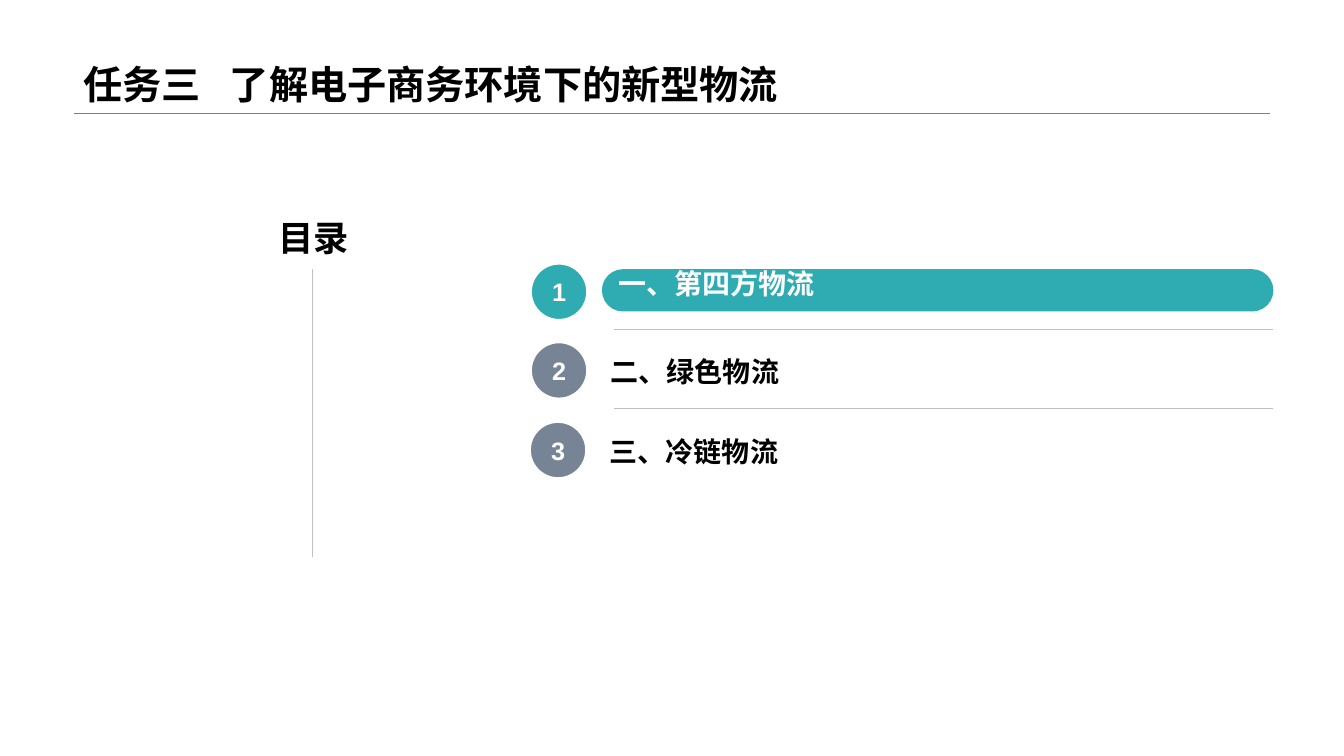
from lxml import etree
from pptx import Presentation
from pptx.dml.color import RGBColor
from pptx.enum.shapes import MSO_CONNECTOR, MSO_SHAPE
from pptx.enum.text import MSO_ANCHOR, PP_ALIGN
from pptx.oxml.ns import qn
from pptx.util import Inches, Pt

BLACK = RGBColor(0x00, 0x00, 0x00)
WHITE = RGBColor(0xFF, 0xFF, 0xFF)
TEAL = RGBColor(0x2F, 0xAC, 0xB2)
SLATE = RGBColor(0x77, 0x84, 0x95)
GRAY = RGBColor(0x80, 0x80, 0x80)
LIGHT_GRAY = RGBColor(0xBF, 0xBF, 0xBF)

BADGE_SIZE = 0.57
LABEL_WIDTH, LABEL_HEIGHT = 6.66, 0.42

# number, badge left and top, label left and top, label text
TOPICS = [
    ("1", 5.26, 2.61, 5.97, 2.67, "一、第四方物流"),
    ("2", 5.26, 3.39, 5.96, 3.48, "二、绿色物流"),
    ("3", 5.25, 4.18, 5.95, 4.27, "三、冷链物流"),
]


def write_text(shape, text, size, color, anchor, align=PP_ALIGN.LEFT):
    frame = shape.text_frame
    frame.word_wrap = True
    frame.vertical_anchor = anchor
    paragraph = frame.paragraphs[0]
    paragraph.text = text
    paragraph.alignment = align
    paragraph.font.name = "Arial"
    paragraph.font.size = Pt(size)
    paragraph.font.bold = True
    paragraph.font.color.rgb = color
    return paragraph


def add_tab_stop(paragraph, position):
    properties = paragraph._p.get_or_add_pPr()
    tab_list = etree.Element(qn("a:tabLst"))
    etree.SubElement(tab_list, qn("a:tab"), pos=str(position), algn="l")
    properties.find(qn("a:defRPr")).addprevious(tab_list)


def set_title(slide):
    title = slide.shapes.title
    title.left, title.top = Inches(0.73), Inches(0)
    title.width, title.height = Inches(11.87), Inches(1.12)
    paragraph = write_text(title, "任务三\t了解电子商务环境下的新型物流", 28, BLACK, MSO_ANCHOR.BOTTOM)
    paragraph.line_spacing = 0.9
    add_tab_stop(paragraph, Inches(1.45))


def add_rule(slide, x1, y1, x2, y2, color):
    rule = slide.shapes.add_connector(
        MSO_CONNECTOR.STRAIGHT, Inches(x1), Inches(y1), Inches(x2), Inches(y2))
    rule.line.color.rgb = color
    rule.line.width = Pt(0.25)
    etree.SubElement(rule._element.spPr, qn("a:effectLst"))


def add_filled_shape(slide, kind, left, top, width, height, fill):
    shape = slide.shapes.add_shape(
        kind, Inches(left), Inches(top), Inches(width), Inches(height))
    shape.shadow.inherit = False
    shape.fill.solid()
    shape.fill.fore_color.rgb = fill
    shape.line.fill.background()
    return shape


def add_badge(slide, number, left, top, fill):
    badge = add_filled_shape(slide, MSO_SHAPE.OVAL, left, top, BADGE_SIZE, BADGE_SIZE, fill)
    badge.line.color.rgb = WHITE
    badge.line.width = Pt(2.25)
    write_text(badge, number, 18, WHITE, MSO_ANCHOR.MIDDLE, PP_ALIGN.CENTER)


def add_active_label(slide, text, left, top):
    pill = add_filled_shape(
        slide, MSO_SHAPE.ROUNDED_RECTANGLE, left, top, LABEL_WIDTH, LABEL_HEIGHT, TEAL)
    pill.adjustments[0] = 0.5
    write_text(pill, text, 20, WHITE, MSO_ANCHOR.BOTTOM).line_spacing = 1.1


def add_label(slide, text, left, top):
    box = slide.shapes.add_textbox(
        Inches(left), Inches(top), Inches(LABEL_WIDTH), Inches(LABEL_HEIGHT))
    write_text(box, text, 20, BLACK, MSO_ANCHOR.BOTTOM)


def add_contents_heading(slide):
    heading = add_filled_shape(slide, MSO_SHAPE.RECTANGLE, 1.65, 2.1, 1.91, 0.57, WHITE)
    write_text(heading, "目录", 25.2, BLACK, MSO_ANCHOR.TOP, PP_ALIGN.RIGHT)


def main():
    presentation = Presentation()
    presentation.slide_width = Inches(13.33)
    presentation.slide_height = Inches(7.5)
    slide = presentation.slides.add_slide(presentation.slide_layouts[5])

    set_title(slide)
    add_rule(slide, 0.73, 1.12, 12.6, 1.12, GRAY)
    add_rule(slide, 3.1, 2.15, 3.1, 5.53, LIGHT_GRAY)
    add_contents_heading(slide)
    for y in (3.27, 4.05):
        add_rule(slide, 6.09, y, 12.63, y, LIGHT_GRAY)

    for index, (number, badge_left, badge_top, left, top, text) in enumerate(TOPICS):
        active = index == 0
        add_badge(slide, number, badge_left, badge_top, TEAL if active else SLATE)
        if active:
            add_active_label(slide, text, left, top)
        else:
            add_label(slide, text, left, top)

    presentation.save("out.pptx")


if __name__ == "__main__":
    main()
